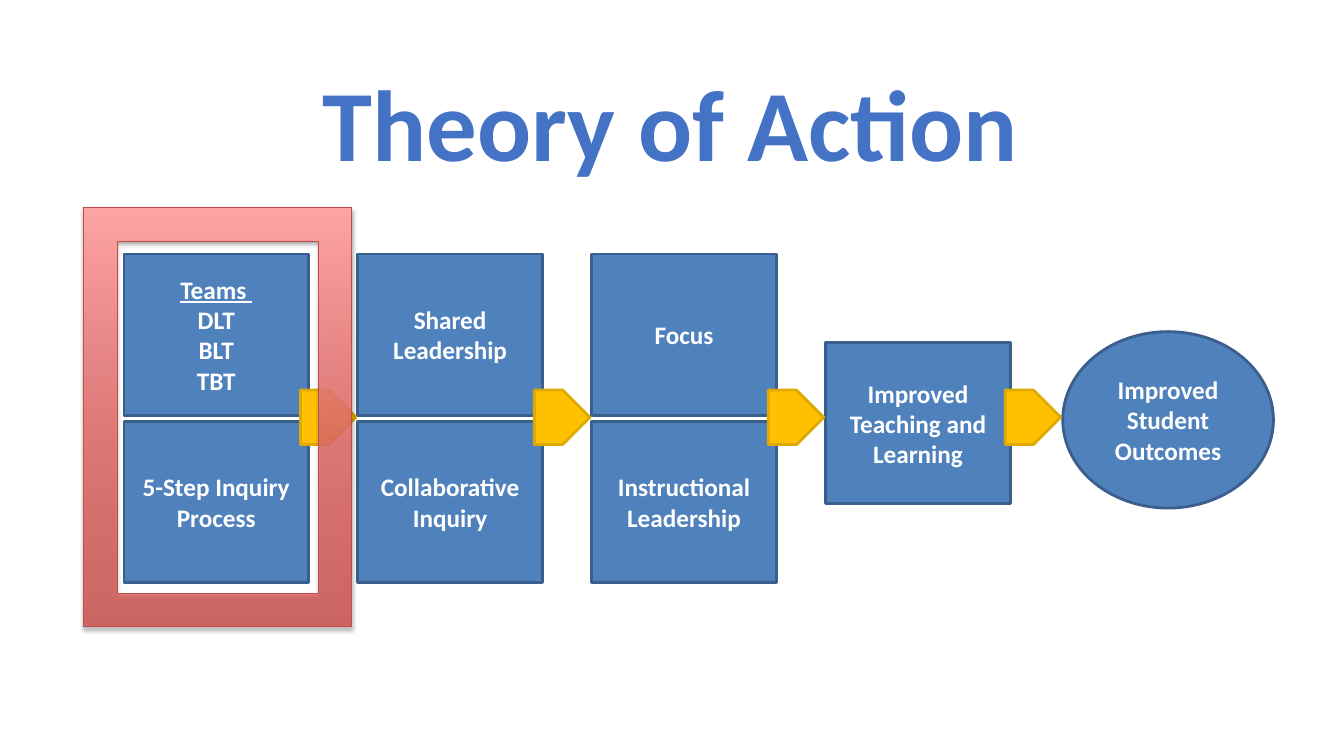
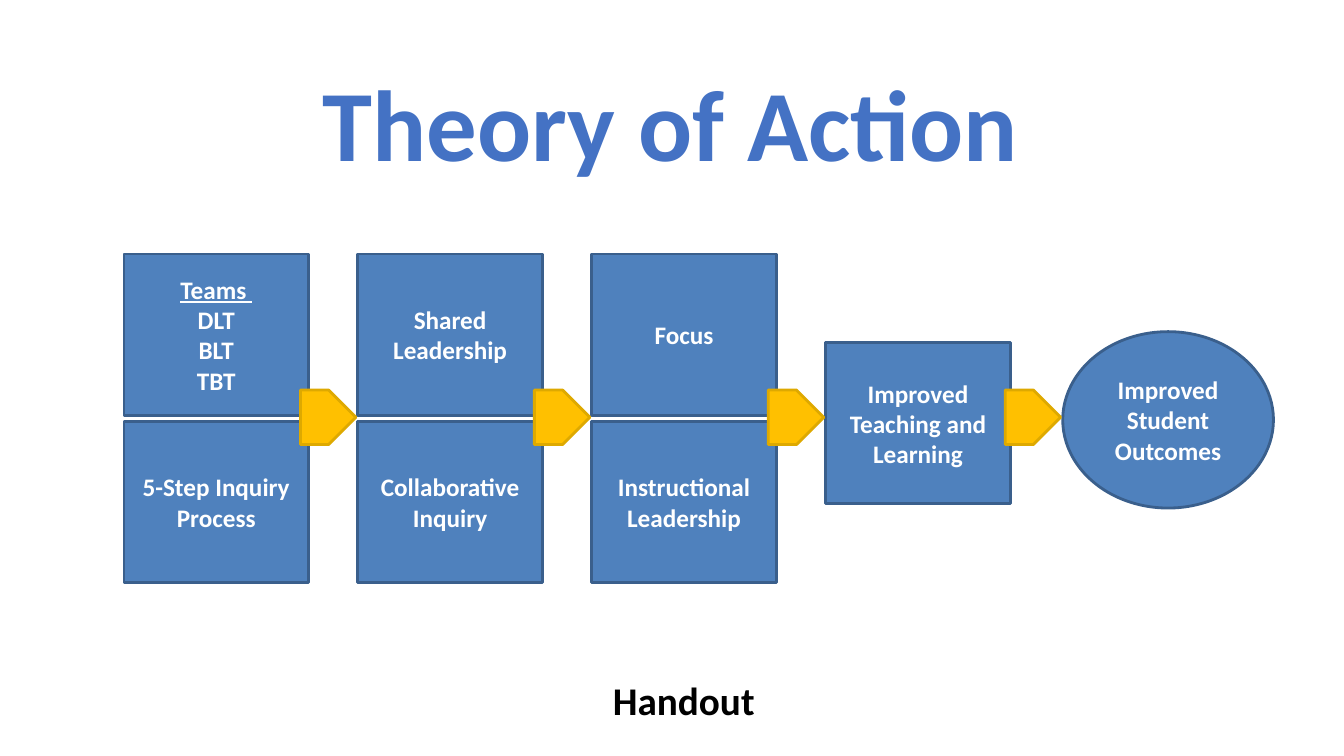
from lxml import etree
from pptx import Presentation
from pptx.dml.color import RGBColor
from pptx.enum.shapes import MSO_SHAPE
from pptx.enum.text import MSO_ANCHOR, PP_ALIGN
from pptx.oxml import parse_xml
from pptx.oxml.ns import nsdecls, qn
from pptx.util import Inches, Pt

RECTANGLE, OVAL = MSO_SHAPE.RECTANGLE, MSO_SHAPE.OVAL
ARROW, FRAME = MSO_SHAPE.RIGHT_ARROW, MSO_SHAPE.FRAME
CENTER, LEFT = PP_ALIGN.CENTER, PP_ALIGN.LEFT
MIDDLE = MSO_ANCHOR.MIDDLE
color = RGBColor.from_string

FONT = "Calibri"
TITLE_BLUE, BOX_BLUE, BOX_EDGE = "4472C4", "4F81BD", "3A5F8C"
GOLD, GOLD_EDGE = "FFC000", "DEA900"
RED, PINK, RED_EDGE = "D1403C", "FFA6A5", "BF4C48"
WHITE, BLACK = "FFFFFF", "000000"

GRID_LEFT, GRID_TOP = 1.23, 2.52
COLUMN, ROW = 2.32, 1.66
BOX_WIDTH, BOX_HEIGHT = 1.83, 1.6
OUTCOME_LEFT = 10.54
ARROW_WIDTH, ARROW_HEIGHT, ARROW_TOP = 0.55, 0.54, 3.87
ARROW_GAP = 0.02

BOXES = [
    (0, 0, ["Teams ", "DLT", "BLT", "TBT"]),
    (0, 1, ["5-Step Inquiry Process"]),
    (1, 0, ["Shared Leadership"]),
    (1, 1, ["Collaborative Inquiry"]),
    (2, 0, ["Focus"]),
    (2, 1, ["Instructional Leadership"]),
    (3, 0.53, ["Improved Teaching and Learning"]),
]


def add_outlined(slide, kind, place, fill, edge, width=2):
    shape = slide.shapes.add_shape(kind, *map(Inches, place))
    shape.shadow.inherit = False
    shape.fill.solid()
    shape.fill.fore_color.rgb = color(fill)
    shape.line.color.rgb = color(edge)
    shape.line.width = Pt(width)
    return shape


def write(shape, lines, size, text_color, alignment=CENTER):
    frame = shape.text_frame
    frame.word_wrap = True
    for index, line in enumerate(lines):
        paragraph = frame.add_paragraph() if index else frame.paragraphs[0]
        paragraph.alignment = alignment
        run = paragraph.add_run()
        run.text = line
        run.font.name = FONT
        run.font.size = Pt(size)
        run.font.bold = True
        run.font.color.rgb = color(text_color)
        run.font.underline = len(lines) > 1 and index == 0


presentation = Presentation()
presentation.slide_width = Inches(13.33)
presentation.slide_height = Inches(7.5)
blank = presentation.slide_layouts[6]
slides = [presentation.slides.add_slide(blank) for _ in range(2)]

for slide in slides:
    title = slide.shapes.add_textbox(*map(Inches, (2.61, 0.55, 8.08, 1.31)))
    write(title, ["Theory of Action"], 72, TITLE_BLUE)

    for column, row, lines in BOXES:
        place = (GRID_LEFT + column * COLUMN, GRID_TOP + row * ROW, BOX_WIDTH, BOX_HEIGHT)
        box = add_outlined(slide, RECTANGLE, place, BOX_BLUE, BOX_EDGE)
        box.text_frame.vertical_anchor = MIDDLE
        write(box, lines, 18, WHITE)
        if lines == ["Focus"]:
            box.text_frame.paragraphs[0].space_after = Pt(3)

    outcome = add_outlined(slide, OVAL, (OUTCOME_LEFT, 3.29, 2.09, 1.75), BOX_BLUE, BOX_EDGE)
    outcome.text_frame.vertical_anchor = MIDDLE
    write(outcome, ["Improved Student Outcomes"], 18, WHITE)

    targets = [GRID_LEFT + column * COLUMN for column in (1, 2, 3)] + [OUTCOME_LEFT]
    for target in targets:
        place = (target - ARROW_GAP - ARROW_WIDTH, ARROW_TOP, ARROW_WIDTH, ARROW_HEIGHT)
        arrow = add_outlined(slide, ARROW, place, GOLD, GOLD_EDGE)
        arrow.adjustments[0] = 1
        arrow.adjustments[1] = 0.5

teams_slide, handout_slide = slides

highlight = add_outlined(teams_slide, FRAME, (0.83, 2.06, 2.66, 4.16), PINK, RED_EDGE, 0.75)
highlight.fill.gradient()
highlight.fill.gradient_angle = 90
for stop, position, tint in zip(highlight.fill.gradient_stops, (0, 1), (RED, PINK)):
    stop.position = position
    stop.color.rgb = color(tint)
properties = highlight.element.spPr
red_stop = properties.find(".//" + qn("a:srgbClr"))
etree.SubElement(red_stop, qn("a:alpha"), val="70000")
effects = properties.find(qn("a:effectLst"))
effects.append(parse_xml(
    f'<a:outerShdw {nsdecls("a")} blurRad="{Pt(3.1)}" dist="{Pt(1.8)}" dir="5400000" rotWithShape="0">'
    f'<a:srgbClr val="{BLACK}"><a:alpha val="35000"/></a:srgbClr></a:outerShdw>'
))

handout = handout_slide.shapes.add_textbox(*map(Inches, (5.98, 6.66, 2.82, 0.57)))
write(handout, ["Handout"], 28, BLACK, LEFT)

presentation.save("out.pptx")
